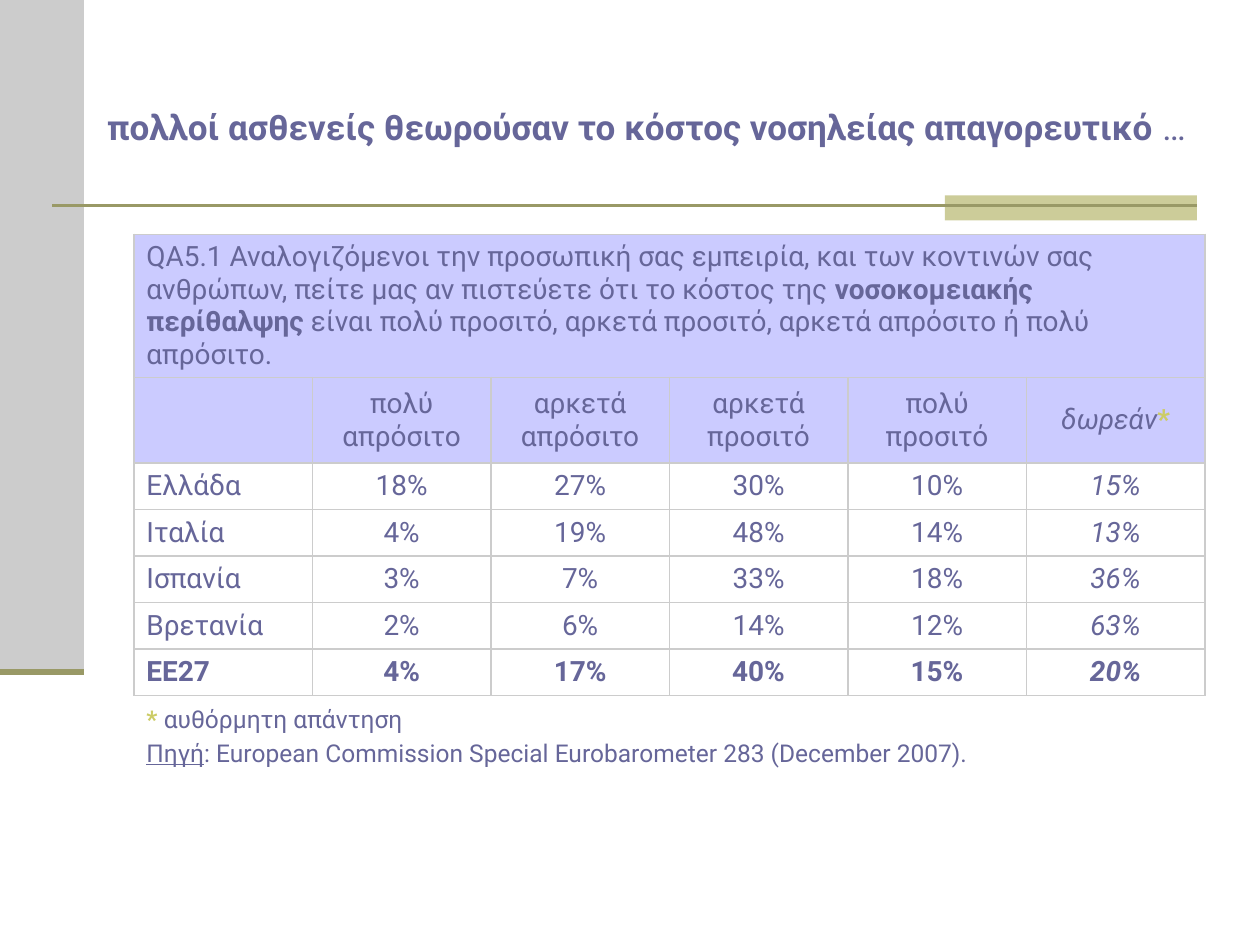
import pptx
import pptx.util
import pptx.dml.color
import pptx.enum.shapes
import pptx.enum.text
import pptx.oxml
import pptx.oxml.ns
import lxml.etree

Pt = pptx.util.Pt
ANCHOR = pptx.enum.text.MSO_ANCHOR
ALIGN = pptx.enum.text.PP_ALIGN

THEME = {
    "font": "Roboto",
    "text": "666699",
    "accent": "CCCC66",
    "sidebar": "CCCCCC",
    "tab": "CCCC99",
    "rule": "999966",
    "header": "9999FF",
    "border": "CCCCCC",
    "title_size": 20,
    "table_size": 16,
    "note_size": 14,
}

TITLE = [
    ("πολλοί ασθενείς θεωρούσαν το κόστος νοσηλείας απαγορευτικό ", {"bold": True}),
    ("…", {}),
]
QUESTION = [
    ("QA5.1 Αναλογιζόμενοι την προσωπική σας εμπειρία, και των κοντινών σας "
     "ανθρώπων, πείτε μας αν πιστεύετε ότι το κόστος της ", {}),
    ("νοσοκομειακής περίθαλψης", {"bold": True}),
    (" είναι πολύ προσιτό, αρκετά προσιτό, αρκετά απρόσιτο ή πολύ απρόσιτο.", {}),
]
ANSWERS = ["πολύ απρόσιτο", "αρκετά απρόσιτο", "αρκετά προσιτό", "πολύ προσιτό"]
FREE = [("δωρεάν", {"italic": True}), ("*", {"bold": True, "color": THEME["accent"]})]
COUNTRIES = [
    ("Ελλάδα", "18%", "27%", "30%", "10%", "15%"),
    ("Ιταλία", "4%", "19%", "48%", "14%", "13%"),
    ("Ισπανία", "3%", "7%", "33%", "18%", "36%"),
    ("Βρετανία", "2%", "6%", "14%", "12%", "63%"),
    ("ΕΕ27", "4%", "17%", "40%", "15%", "20%"),
]
NOTES = [
    [("* ", {"bold": True, "color": THEME["accent"]}), ("αυθόρμητη απάντηση", {})],
    [("Πηγή", {"underline": True}),
     (": European Commission Special Eurobarometer 283 (December 2007).", {})],
]

COLUMNS = 6
TABLE_LEFT, TABLE_TOP, TABLE_WIDTH = 76.5, 134, 612
ROW_HEIGHTS = [65, 49] + [26.6] * len(COUNTRIES) + [47]


def rgb(value):
    return pptx.dml.color.RGBColor.from_string(value)


def write(para, text, size=THEME["table_size"], color=THEME["text"],
          bold=False, italic=False, underline=False):
    span = para.add_run()
    span.text = text
    font = span.font
    font.name, font.size = THEME["font"], Pt(size)
    font.bold, font.italic, font.underline = bold, italic, underline
    font.color.rgb = rgb(color)


def add_block(slide, left, top, width, height, color):
    block = slide.shapes.add_shape(pptx.enum.shapes.MSO_SHAPE.RECTANGLE,
                                   Pt(left), Pt(top), Pt(width), Pt(height))
    block.shadow.inherit = False
    block.fill.solid()
    block.fill.fore_color.rgb = rgb(color)
    block.line.fill.background()


def add_rule(slide, left, right, y, weight):
    rule = slide.shapes.add_connector(pptx.enum.shapes.MSO_CONNECTOR.STRAIGHT,
                                      Pt(left), Pt(y), Pt(right), Pt(y))
    rule.line.color.rgb = rgb(THEME["rule"])
    rule.line.width = Pt(weight)
    lxml.etree.SubElement(rule._element.spPr, pptx.oxml.ns.qn("a:effectLst"))


def set_borders(cell, visible_sides):
    properties = cell._tc.get_or_add_tcPr()
    for index, side in enumerate("LRTB"):
        paint = "<a:noFill/>"
        if side in visible_sides:
            paint = f'<a:solidFill><a:srgbClr val="{THEME["border"]}"/></a:solidFill>'
        properties.insert(index, pptx.oxml.parse_xml(
            f'<a:ln{side} {pptx.oxml.ns.nsdecls("a")} w="{Pt(1)}">{paint}</a:ln{side}>'))


def style_cell(cell, row):
    cell.vertical_anchor = ANCHOR.MIDDLE
    cell.margin_left = cell.margin_right = Pt(7.2)
    cell.margin_top = cell.margin_bottom = Pt(3.6)
    if row < 2:
        cell.fill.solid()
        cell.fill.fore_color.rgb = rgb(THEME["header"])
        color = cell._tc.tcPr.find(".//" + pptx.oxml.ns.qn("a:srgbClr"))
        lxml.etree.SubElement(color, pptx.oxml.ns.qn("a:alpha"), val="50000")
    else:
        cell.fill.background()
    set_borders(cell, "T" if row == len(ROW_HEIGHTS) - 1 else "LRTB")


def fill_cell(cell, spans, centred=False, **common):
    para = cell.text_frame.paragraphs[0]
    para.alignment = ALIGN.CENTER if centred else ALIGN.LEFT
    for text, style in spans:
        write(para, text, **{**common, **style})


def add_title(slide):
    title = slide.shapes.title
    title.left, title.top, title.width, title.height = Pt(54), Pt(0), Pt(635), Pt(111.6)
    frame = title.text_frame
    frame.auto_size = pptx.enum.text.MSO_AUTO_SIZE.NONE
    frame.word_wrap = True
    frame.vertical_anchor = ANCHOR.BOTTOM
    frame.margin_bottom = Pt(27)
    para = frame.paragraphs[0]
    para.alignment = ALIGN.LEFT
    for text, style in TITLE:
        write(para, text, size=THEME["title_size"], **style)


def add_survey_table(slide):
    table = slide.shapes.add_table(len(ROW_HEIGHTS), COLUMNS, Pt(TABLE_LEFT), Pt(TABLE_TOP),
                                   Pt(TABLE_WIDTH), Pt(sum(ROW_HEIGHTS))).table
    table.first_row = table.horz_banding = False
    for column in table.columns:
        column.width = Pt(TABLE_WIDTH / COLUMNS)
    for row, height in enumerate(ROW_HEIGHTS):
        table.rows[row].height = Pt(height)
        for column in range(COLUMNS):
            style_cell(table.cell(row, column), row)

    last = len(ROW_HEIGHTS) - 1
    for row in (0, last):
        table.cell(row, 0).merge(table.cell(row, COLUMNS - 1))
    fill_cell(table.cell(0, 0), QUESTION)
    headings = [[(answer, {})] for answer in ANSWERS] + [FREE]
    for column, spans in enumerate(headings, 1):
        fill_cell(table.cell(1, column), spans, centred=True)
    for row, values in enumerate(COUNTRIES, 2):
        for column, value in enumerate(values):
            fill_cell(table.cell(row, column), [(value, {})], centred=column > 0,
                      bold=row == last - 1, italic=column == COLUMNS - 1)

    note = table.cell(last, 0)
    fill_cell(note, NOTES[0], size=THEME["note_size"])
    para = note.text_frame.add_paragraph()
    para.space_before = Pt(2.8)
    for text, style in NOTES[1]:
        write(para, text, size=THEME["note_size"], **style)


def main():
    deck = pptx.Presentation()
    deck.slide_width, deck.slide_height = Pt(720), Pt(540)
    slide = deck.slides.add_slide(deck.slide_layouts[5])
    add_block(slide, 0, 0, 48, 384, THEME["sidebar"])
    add_block(slide, 540, 111.6, 144, 14.4, THEME["tab"])
    add_rule(slide, 30, 684, 117.6, 1.5)
    add_rule(slide, 0, 48, 384, 3.5)
    add_title(slide)
    add_survey_table(slide)
    deck.save("out.pptx")


if __name__ == "__main__":
    main()
